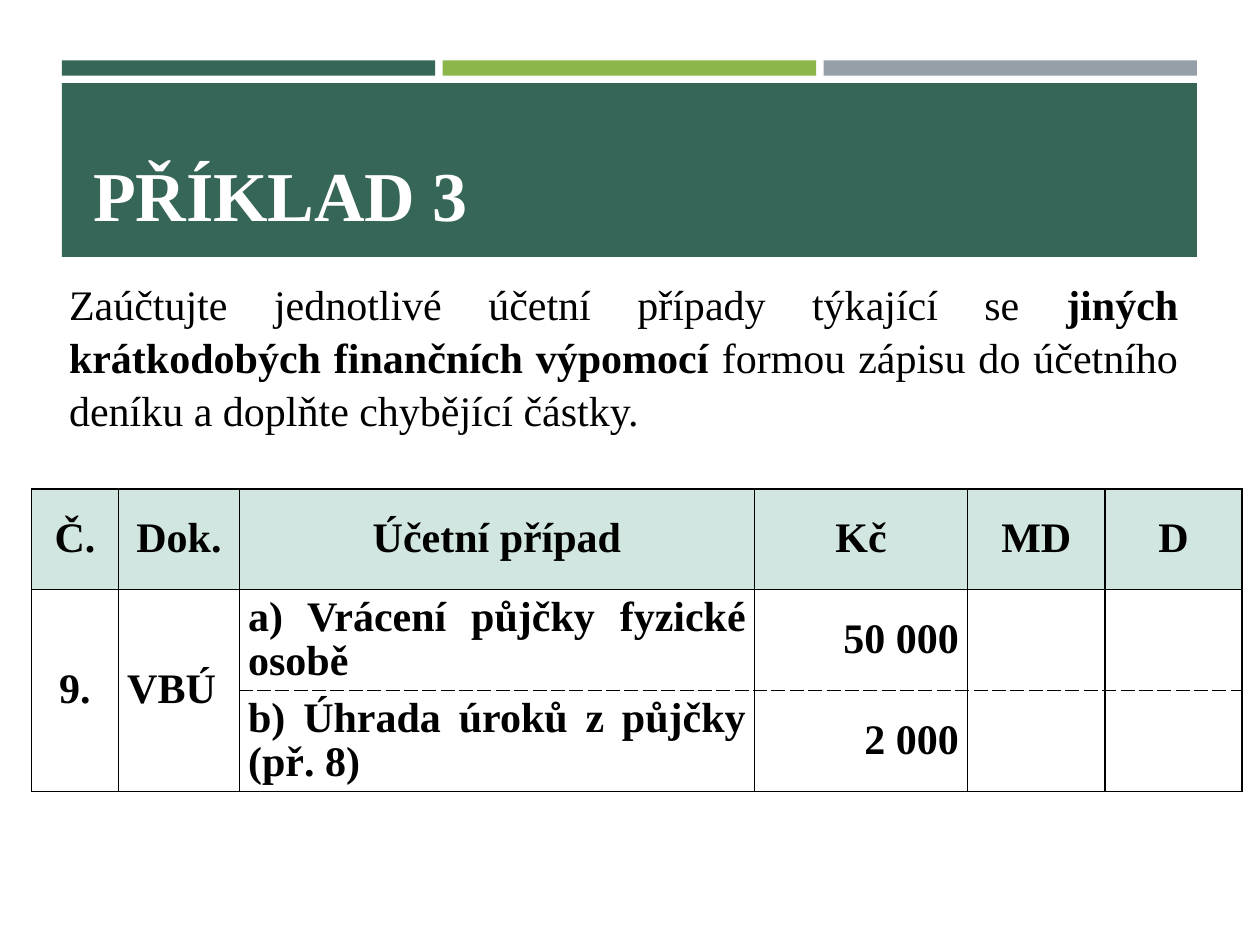
from dataclasses import dataclass

from lxml.etree import SubElement
from pptx import Presentation
from pptx.dml.color import RGBColor
from pptx.enum.shapes import MSO_SHAPE
from pptx.enum.text import MSO_ANCHOR, PP_ALIGN
from pptx.oxml.ns import qn
from pptx.slide import Slide
from pptx.table import _Cell
from pptx.text.text import TextFrame
from pptx.util import Inches, Pt

GREEN = RGBColor(0x36, 0x66, 0x58)
LIME = RGBColor(0x8C, 0xB6, 0x4A)
GREY = RGBColor(0x96, 0x9F, 0xA7)
MINT = RGBColor(0xD1, 0xE6, 0xE0)
BLACK = RGBColor(0, 0, 0)
WHITE = RGBColor(0xFF, 0xFF, 0xFF)
FONT = "Times New Roman"

BAND_LEFT, BAND_WIDTH, BAR_GAP = 0.49, 9.01, 0.06
COLUMNS = (0.69, 0.96, 4.09, 1.69, 1.09, 1.09)
ROW_HEIGHT = 0.8


@dataclass(frozen=True)
class Box:
    left: float
    top: float
    width: float
    height: float

    def emu(self) -> tuple[int, ...]:
        return tuple(Inches(v) for v in (self.left, self.top, self.width, self.height))


@dataclass(frozen=True)
class Run:
    text: str
    bold: bool = True


@dataclass(frozen=True)
class Entry:
    row: int
    col: int
    text: str
    align: PP_ALIGN = PP_ALIGN.CENTER


HEADINGS = ("Č.", "Dok.", "Účetní případ", "Kč", "MD", "D")
ENTRIES = [Entry(0, col, text) for col, text in enumerate(HEADINGS)] + [
    Entry(1, 0, "9."),
    Entry(1, 1, "VBÚ", PP_ALIGN.LEFT),
    Entry(1, 2, "a) Vrácení půjčky fyzické osobě", PP_ALIGN.JUSTIFY),
    Entry(1, 3, "50 000", PP_ALIGN.RIGHT),
    Entry(2, 2, "b) Úhrada úroků z půjčky (př. 8)", PP_ALIGN.JUSTIFY),
    Entry(2, 3, "2 000", PP_ALIGN.RIGHT),
]


def add_band(slide: Slide, box: Box, color: RGBColor) -> None:
    sp = slide.shapes.add_shape(MSO_SHAPE.RECTANGLE, *box.emu())
    sp.shadow.inherit = False
    sp.fill.solid()
    sp.fill.fore_color.rgb = color
    sp.line.fill.background()


def write(tf: TextFrame, runs: list[Run], size: float, color: RGBColor,
          align: PP_ALIGN, spacing: float) -> None:
    p = tf.paragraphs[0]
    p.alignment = align
    p.line_spacing = spacing
    for run in runs:
        r = p.add_run()
        r.text = run.text
        r.font.name = FONT
        r.font.size = Pt(size)
        r.font.bold = run.bold
        r.font.color.rgb = color


def add_text(slide: Slide, box: Box, anchor: MSO_ANCHOR) -> TextFrame:
    tf = slide.shapes.add_textbox(*box.emu()).text_frame
    tf.word_wrap = True
    tf.vertical_anchor = anchor
    return tf


def set_borders(cell: _Cell, dashed_side: str) -> None:
    """Draw all four sides; dashed_side is T, B or empty."""
    tc_pr = cell._tc.get_or_add_tcPr()
    for side in "LRTB":
        ln = SubElement(tc_pr, qn(f"a:ln{side}"), w=str(Pt(1)))
        fill = SubElement(ln, qn("a:solidFill"))
        SubElement(fill, qn("a:srgbClr"), val=str(BLACK))
        dash = "dash" if side == dashed_side else "solid"
        SubElement(ln, qn("a:prstDash"), val=dash)


def add_journal(slide: Slide) -> None:
    box = Box(0.25, 3.88, sum(COLUMNS), 3 * ROW_HEIGHT)
    table = slide.shapes.add_table(3, len(COLUMNS), *box.emu()).table
    for column, width in zip(table.columns, COLUMNS):
        column.width = Inches(width)
    for row_no, row in enumerate(table.rows):
        row.height = Inches(ROW_HEIGHT)
        for col, cell in enumerate(row.cells):
            set_borders(cell, ("", "B", "T")[row_no] if col >= 2 else "")
            cell.margin_left = cell.margin_right = Inches(0.07)
            cell.margin_top = cell.margin_bottom = 0
            cell.vertical_anchor = MSO_ANCHOR.MIDDLE
            if row_no == 0:
                cell.fill.solid()
                cell.fill.fore_color.rgb = MINT
            else:
                cell.fill.background()
    for col in (0, 1):
        table.cell(1, col).merge(table.cell(2, col))
    for e in ENTRIES:
        tf = table.cell(e.row, e.col).text_frame
        write(tf, [Run(e.text)], 24, BLACK, e.align, 0.95)


def main() -> None:
    prs = Presentation()
    prs.slide_width, prs.slide_height = Inches(10), Inches(7.5)
    slide = prs.slides.add_slide(prs.slide_layouts[6])

    bar_width = (BAND_WIDTH - 2 * BAR_GAP) / 3
    for i, color in enumerate((GREEN, LIME, GREY)):
        left = BAND_LEFT + i * (bar_width + BAR_GAP)
        add_band(slide, Box(left, 0.48, bar_width, 0.12), color)
    add_band(slide, Box(BAND_LEFT, 0.66, BAND_WIDTH, 1.38), GREEN)

    title = add_text(slide, Box(0.64, 0.75, 8.74, 1.18), MSO_ANCHOR.BOTTOM)
    write(title, [Run("PŘÍKLAD 3")], 40, WHITE, PP_ALIGN.LEFT, 0.9)

    task = add_text(slide, Box(0.45, 2.14, 9, 1.31), MSO_ANCHOR.TOP)
    write(task, [
        Run("Zaúčtujte jednotlivé účetní případy týkající se ", False),
        Run("jiných krátkodobých finančních výpomocí "),
        Run("formou zápisu do účetního deníku a doplňte chybějící částky.", False),
    ], 24, BLACK, PP_ALIGN.JUSTIFY, 1.05)

    add_journal(slide)
    prs.save("out.pptx")


if __name__ == "__main__":
    main()
